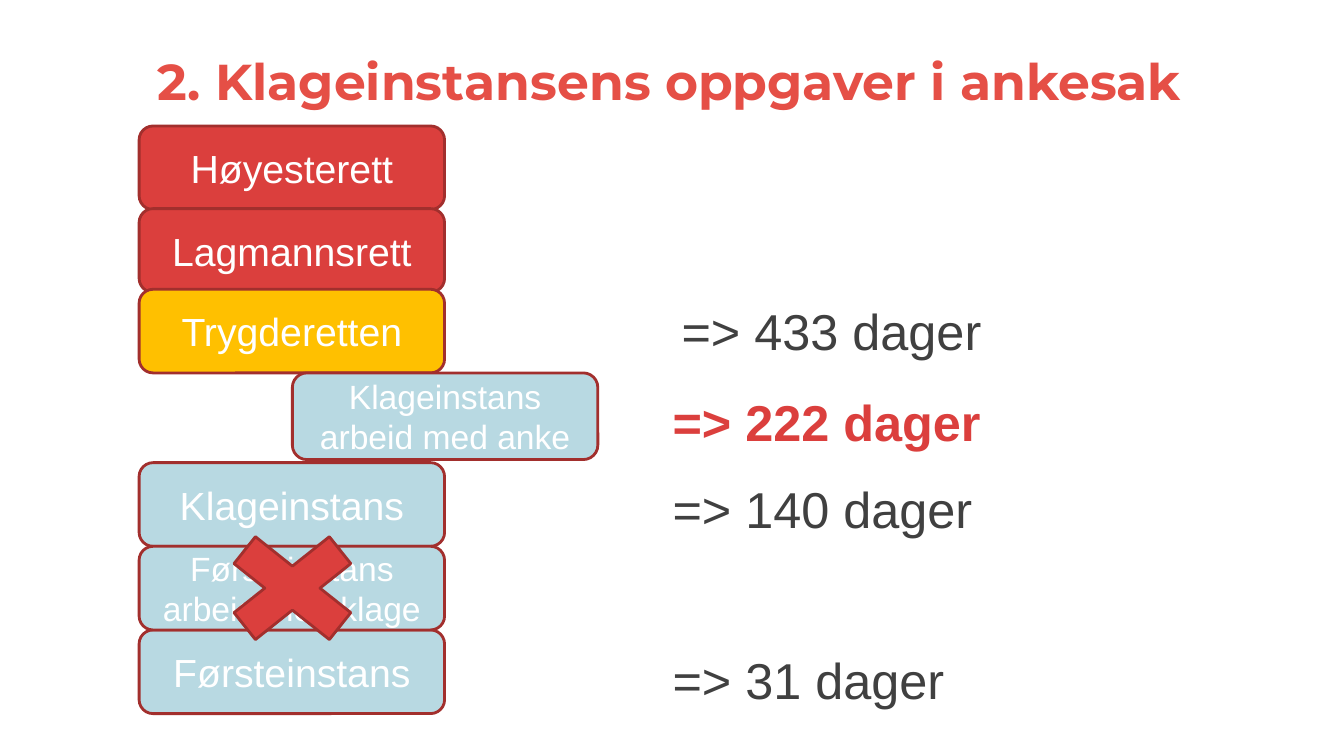
import pptx
import pptx.util
import pptx.dml.color
import pptx.enum.shapes
import pptx.enum.text
import lxml.etree

Inches, Pt = pptx.util.Inches, pptx.util.Pt
KIND = pptx.enum.shapes.MSO_SHAPE
ALIGN = pptx.enum.text.PP_ALIGN
ANCHOR = pptx.enum.text.MSO_ANCHOR

RED, DARK, GOLD, BLUE = "DB3F3D", "A22F2D", "FFC000", "B8D9E2"
CORAL, GREY, WHITE = "E54F46", "404040", "FFFFFF"

TITLE = "2. Klageinstansens oppgaver i ankesak"
# text, left, top, height, fill, text size
STEPS = [
    ("Høyesterett", 1.38, 1.25, 0.83, RED, 28),
    ("Lagmannsrett", 1.38, 2.07, 0.83, RED, 28),
    ("Trygderetten", 1.38, 2.87, 0.83, GOLD, 28),
    ("Klageinstans", 1.38, 4.59, 0.83, BLUE, 28),
    ("Førsteinstans", 1.38, 6.25, 0.83, BLUE, 28),
    ("Førsteinstans arbeid med klage", 1.38, 5.42, 0.83, BLUE, 24),
    ("Klageinstans arbeid med anke", 2.9, 3.7, 0.86, BLUE, 24),
]
WIDTH = 3.03
CROSS = (1.99, 5.11, 1.82, 1.45)
# text, colour, bold, space before in points, indent in inches
DAYS = [
    ("=> 433 dager", GREY, False, 0, 0.09),
    ("=> 222 dager", RED, True, 21.5, 0),
    ("=> 140 dager", GREY, False, 18.6, 0),
    ("=> 31 dager", GREY, False, 79.3, 0),
]


def paint(color, tone):
    color.rgb = pptx.dml.color.RGBColor.from_string(tone)


def style(para, size, tone, bold=False, face="Arial"):
    para.font.size = Pt(size)
    para.font.name = face
    para.font.bold = bold
    paint(para.font.color, tone)


def place(holder, left, top, width, height):
    """Move a placeholder and clear its insets, anchoring text at the bottom."""
    holder.left, holder.top = Inches(left), Inches(top)
    holder.width, holder.height = Inches(width), Inches(height)
    frame = holder.text_frame
    frame.margin_left = frame.margin_right = 0
    frame.margin_top = frame.margin_bottom = 0
    frame.vertical_anchor = ANCHOR.BOTTOM
    frame.auto_size = pptx.enum.text.MSO_AUTO_SIZE.NONE
    frame.word_wrap = True
    return frame


def block(slide, kind, box, fill):
    shape = slide.shapes.add_shape(kind, *map(Inches, box))
    shape.shadow.inherit = False
    shape.fill.solid()
    paint(shape.fill.fore_color, fill)
    paint(shape.line.color, DARK)
    shape.line.width = Pt(2)
    return shape


def plain(para, indent):
    """Drop the bullet and set the left indent."""
    props = para._p.get_or_add_pPr()
    props.set("marL", str(Inches(indent)))
    props.set("indent", "0")
    lxml.etree.SubElement(props, pptx.oxml.ns.qn("a:buNone"))


def main():
    deck = pptx.Presentation()
    deck.slide_width, deck.slide_height = Inches(13.33), Inches(7.5)
    slide = deck.slides.add_slide(deck.slide_layouts[1])

    head = place(slide.shapes.title, 0.47, 0.3, 12.34, 0.8)
    head.text = TITLE
    head.paragraphs[0].alignment = ALIGN.CENTER
    style(head.paragraphs[0], 36, CORAL, True, "Montserrat")

    for text, left, top, height, fill, size in STEPS:
        box = (left, top, WIDTH, height)
        frame = block(slide, KIND.ROUNDED_RECTANGLE, box, fill).text_frame
        frame.word_wrap = True
        frame.vertical_anchor = ANCHOR.MIDDLE
        frame.text = text
        frame.paragraphs[0].alignment = ALIGN.CENTER
        style(frame.paragraphs[0], size, WHITE)
    block(slide, KIND.MATH_MULTIPLY, CROSS, RED)

    body = place(slide.placeholders[1], 6.67, 1.19, 6.45, 6.02)
    body.margin_bottom = Inches(0.17)
    body.text = "\n".join(day[0] for day in DAYS)
    for para, (_, tone, bold, gap, indent) in zip(body.paragraphs, DAYS):
        plain(para, indent)
        para.space_before = Pt(gap)
        style(para, 36, tone, bold)

    deck.save("out.pptx")


if __name__ == "__main__":
    main()
